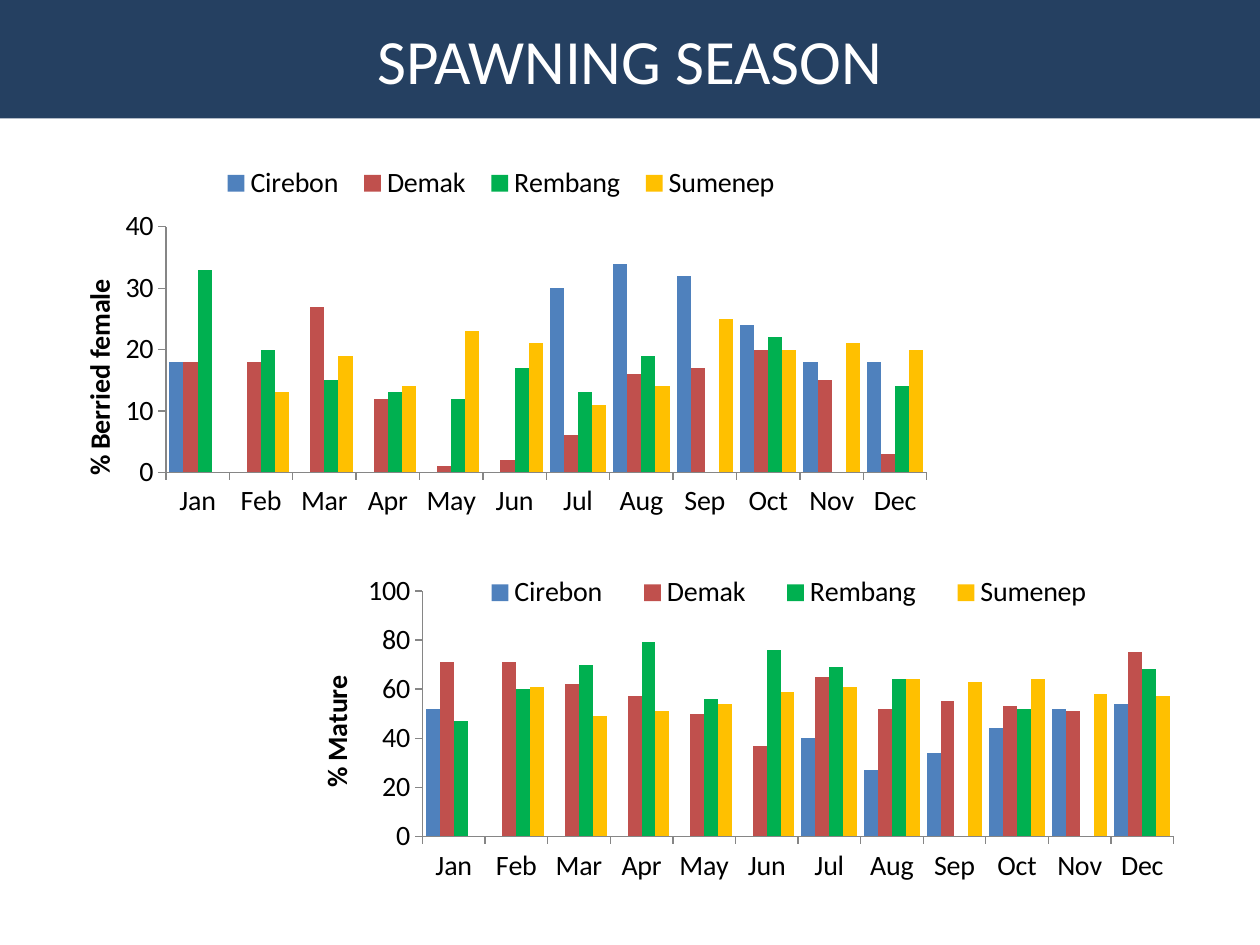
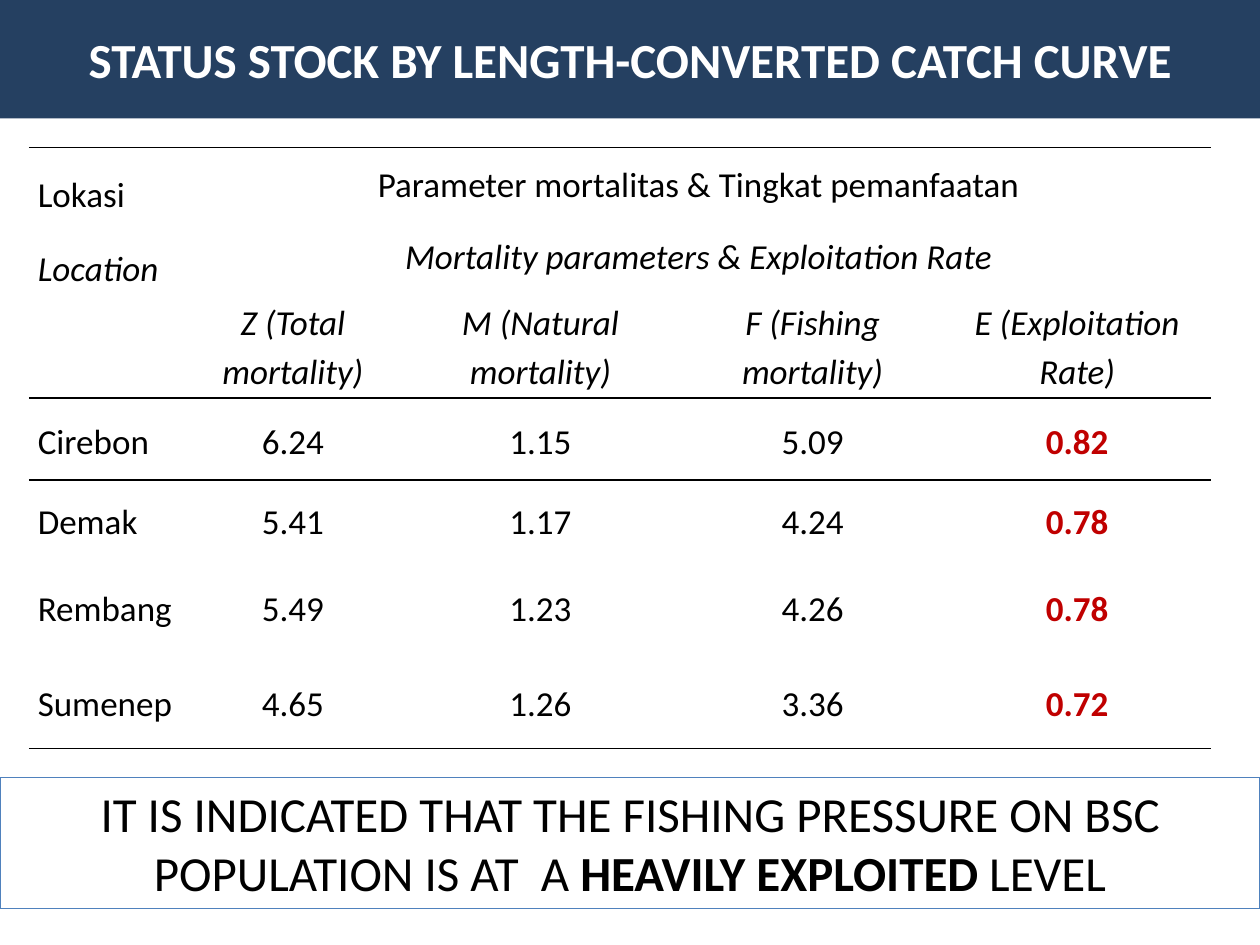
from dataclasses import dataclass
from lxml import etree
from pptx import Presentation
from pptx import util as u
from pptx.chart.data import CategoryChartData
from pptx.dml.color import RGBColor
from pptx.enum import chart as ch, text as t
from pptx.oxml.ns import qn


@dataclass(frozen=True)
class Theme:
    font: str = "Calibri"
    band: str = "254061"
    white: str = "FFFFFF"
    ink: str = "000000"
    alert: str = "C00000"
    axis: str = "868686"
    frame: str = "4F81BD"
    series: tuple = ("4F81BD", "C0504D", "00B050", "FFC000")
    title: int = 36
    subtitle: int = 28
    cell: int = 20
    chart: int = 16


TH = Theme()
MONTHS = "Jan Feb Mar Apr May Jun Jul Aug Sep Oct Nov Dec".split()
SITES = ("Cirebon", "Demak", "Rembang", "Sumenep")
X = None
CHARTS = [
    dict(axis="% Berried female ", at=(0.31, 1.17, 7.19, 3), top=40, step=10,
         plot=(0.14, 0.21, 0.84, 0.65), legend=(0.19, 0.04, 0.64, 0.11), label=(0.04, 0.32),
         rows=[[18, X, X, X, X, X, 30, 34, 32, 24, 18, 18],
               [18, 18, 27, 12, 1, 2, 6, 16, 17, 20, 15, 3],
               [33, 20, 15, 13, 12, 17, 13, 19, X, 22, X, 14],
               [X, 13, 19, 14, 23, 21, 11, 14, 25, 20, 21, 20]]),
    dict(axis="% Mature", at=(2.19, 4.06, 7.27, 3), top=100, step=20,
         plot=(0.16, 0.21, 0.82, 0.65), legend=(0.2, 0.16, 0.72, 0.11), label=(0.04, 0.42),
         rows=[[52, X, X, X, X, X, 40, 27, 34, 44, 52, 54],
               [71, 71, 62, 57, 50, 37, 65, 52, 55, 53, 51, 75],
               [47, 60, 70, 79, 56, 76, 69, 64, X, 52, X, 68],
               [X, 61, 49, 51, 54, 59, 61, 64, 63, 64, 58, 57]]),
]

HEAD = [
    ["Lokasi", "Parameter mortalitas & Tingkat pemanfaatan", "", "", ""],
    ["Location", "Mortality parameters & Exploitation Rate", "", "", ""],
    ["", "Z (Total mortality)", "M (Natural mortality)", "F (Fishing mortality)",
     "E (Exploitation Rate)"],
]
RATES = [("6.24", "1.15", "5.09", "0.82"), ("5.41", "1.17", "4.24", "0.78"),
         ("5.49", "1.23", "4.26", "0.78"), ("4.65", "1.26", "3.36", "0.72")]
COLS = (1.25, 1.69, 2.24, 2.08, 2.12)
ROWS = (0.55, 0.59, 0.85, 0.65, 0.63, 0.75, 0.75)
RULES = {0: "lnT", 2: "lnB", 3: "lnT", 6: "lnB"}
PLAIN_TABLE = "{2D5ABB26-0587-4C30-8999-92F81FD0307C}"
FINDING = [("IT IS INDICATED THAT THE FISHING PRESSURE ON BSC POPULATION IS AT  A ", False),
           ("HEAVILY EXPLOITED ", True), ("LEVEL", False)]


def inches(*values):
    return [u.Inches(v) for v in values]


def rgb(color):
    return RGBColor.from_string(color)


def style(font, size, color=TH.ink, bold=False, italic=False):
    font.name, font.size, font.bold, font.italic = TH.font, u.Pt(size), bold, italic
    font.color.rgb = rgb(color)


def add_slide(prs, title, size, bold=False):
    s = prs.slides.add_slide(prs.slide_layouts[5])
    sp = s.shapes.title
    sp.left, sp.top, sp.width, sp.height = inches(0, 0, 10, 0.94)
    sp.fill.solid()
    sp.fill.fore_color.rgb = rgb(TH.band)
    tf = sp.text_frame
    tf.text = title
    tf.auto_size = t.MSO_AUTO_SIZE.NONE
    tf.vertical_anchor = t.MSO_ANCHOR.MIDDLE
    p = tf.paragraphs[0]
    p.alignment = t.PP_ALIGN.CENTER
    style(p.runs[0].font, size, TH.white, bold)
    return s


def place(el, index, box, inner=False):
    for old in el.findall(qn("c:layout")):
        el.remove(old)
    layout = etree.Element(qn("c:layout"))
    manual = etree.SubElement(layout, qn("c:manualLayout"))
    parts = [("layoutTarget", "inner")] if inner else []
    parts += [("xMode", "edge"), ("yMode", "edge"), *zip("xywh", box)]
    for tag, value in parts:
        etree.SubElement(manual, qn("c:" + tag)).set("val", str(value))
    el.insert(index, layout)


def add_chart(s, d):
    data = CategoryChartData()
    data.categories = MONTHS
    for site, row in zip(SITES, d["rows"]):
        data.add_series(site, row)
    chart = s.shapes.add_chart(ch.XL_CHART_TYPE.COLUMN_CLUSTERED, *inches(*d["at"]), data).chart
    style(chart.font, TH.chart)
    chart.has_title = False
    plot = chart.plots[0]
    plot.gap_width, plot.overlap, plot.vary_by_categories = 50, 0, False
    for series, color in zip(plot.series, TH.series):
        series.format.fill.solid()
        series.format.fill.fore_color.rgb = rgb(color)
    val = chart.value_axis
    for axis in (val, chart.category_axis):
        axis.has_major_gridlines = False
        axis.major_tick_mark = ch.XL_TICK_MARK.OUTSIDE
        axis.format.line.color.rgb = rgb(TH.axis)
    val.minimum_scale, val.maximum_scale, val.major_unit = 0, d["top"], d["step"]
    title = val.axis_title
    title.text_frame.text = d["axis"]
    title.text_frame._txBody.bodyPr.set("rot", "-5400000")
    style(title.text_frame.paragraphs[0].runs[0].font, TH.chart, bold=True)
    chart.has_legend = True
    legend = chart.legend
    legend.position = ch.XL_LEGEND_POSITION.TOP
    legend.include_in_layout = False
    style(legend.font, TH.chart)
    place(chart._chartSpace.chart.plotArea, 0, d["plot"], inner=True)
    place(legend._element, 1, d["legend"])
    place(title._element, 1, d["label"])


def rule(cell, side):
    ln = etree.Element(qn("a:" + side), w=str(u.Pt(1)))
    fill = etree.SubElement(ln, qn("a:solidFill"))
    etree.SubElement(fill, qn("a:srgbClr"), val=TH.ink)
    cell._tc.get_or_add_tcPr().insert(0, ln)


def add_table(s):
    rows = HEAD + [[site, *rates] for site, rates in zip(SITES, RATES)]
    frame = s.shapes.add_table(len(ROWS), len(COLS), *inches(0.23, 1.17, sum(COLS), sum(ROWS)))
    table = frame.table
    table.first_row = table.horz_banding = False
    table._tbl.tblPr.find(qn("a:tableStyleId")).text = PLAIN_TABLE
    for col, width in zip(table.columns, COLS):
        col.width = u.Inches(width)
    for row, height in zip(table.rows, ROWS):
        row.height = u.Inches(height)
    for i in (0, 1):
        table.cell(i, 1).merge(table.cell(i, 4))
    for i, row in enumerate(rows):
        for j, value in enumerate(row):
            cell = table.cell(i, j)
            cell.fill.background()
            cell.margin_left = cell.margin_right = u.Inches(0.07)
            cell.margin_top = cell.margin_bottom = 0
            low = j == 0 and i < 2
            cell.vertical_anchor = t.MSO_ANCHOR.BOTTOM if low else t.MSO_ANCHOR.MIDDLE
            if i in RULES:
                rule(cell, RULES[i])
            if not value:
                continue
            cell.text = value
            p = cell.text_frame.paragraphs[0]
            p.line_spacing = 1.15
            p.alignment = t.PP_ALIGN.CENTER if j else t.PP_ALIGN.LEFT
            key = i > 2 and j == 4
            style(p.runs[0].font, TH.cell, TH.alert if key else TH.ink, key, i in (1, 2))


def add_finding(s):
    sp = s.shapes.add_textbox(*inches(0, 6.17, 10, 1.04))
    sp.line.color.rgb = rgb(TH.frame)
    sp.line.width = u.Pt(0.75)
    tf = sp.text_frame
    tf.word_wrap = True
    tf.auto_size = t.MSO_AUTO_SIZE.SHAPE_TO_FIT_TEXT
    p = tf.paragraphs[0]
    p.alignment = t.PP_ALIGN.CENTER
    for words, bold in FINDING:
        r = p.add_run()
        r.text = words
        style(r.font, TH.subtitle, bold=bold)


def main():
    prs = Presentation()
    prs.slide_width, prs.slide_height = inches(10, 7.5)
    s = add_slide(prs, "SPAWNING SEASON", TH.title)
    for d in CHARTS:
        add_chart(s, d)
    s = add_slide(prs, "STATUS STOCK BY LENGTH-CONVERTED CATCH CURVE", TH.subtitle, True)
    add_table(s)
    add_finding(s)
    prs.save("out.pptx")


if __name__ == "__main__":
    main()
